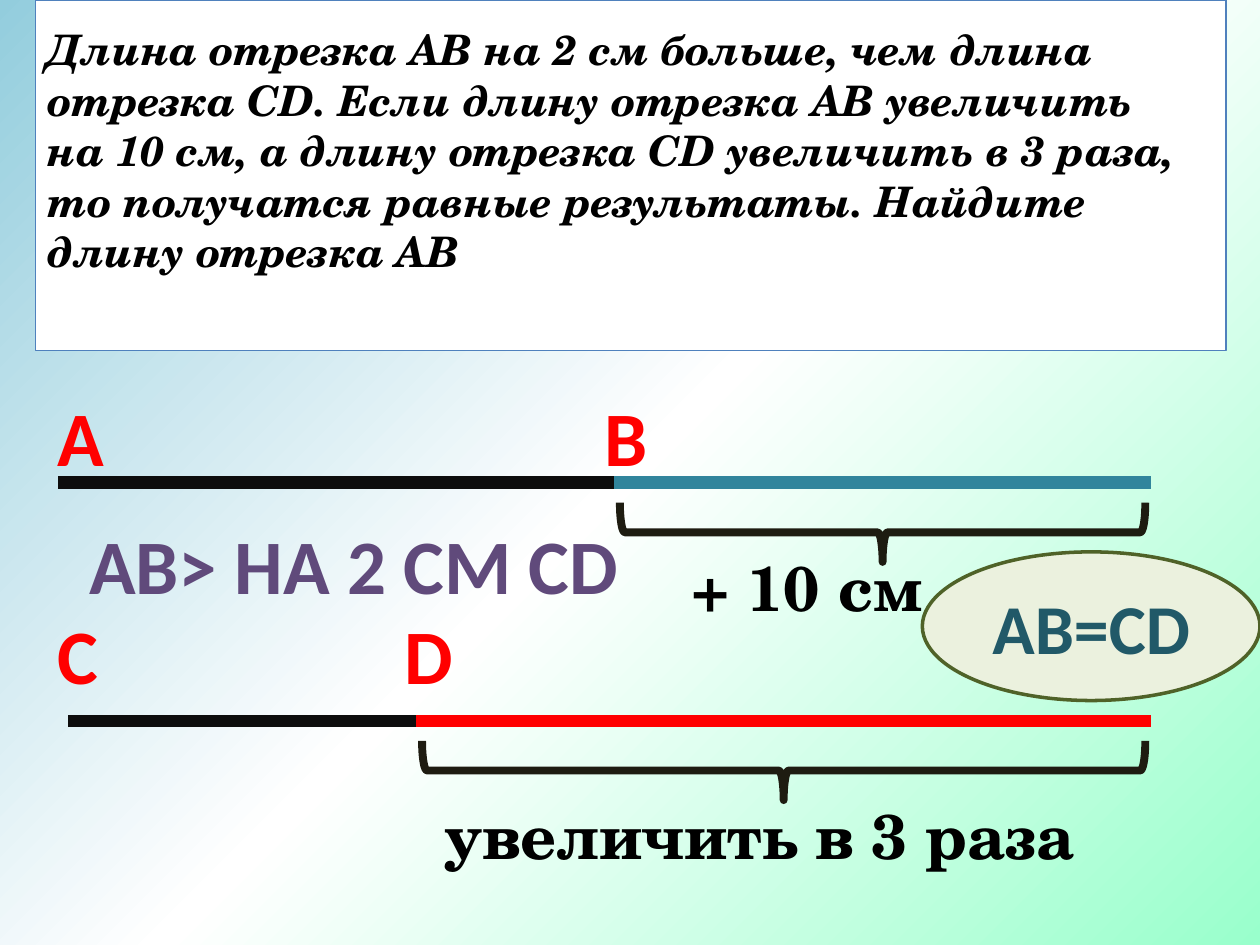
from copy import deepcopy

from pptx import Presentation
from pptx import util as u
from pptx.dml.color import RGBColor
from pptx.enum import shapes, text
from pptx.oxml import ns, xmlchemy

SKY = RGBColor(0x93, 0xCD, 0xDD)
WHITE = RGBColor(0xFF, 0xFF, 0xFF)
MINT = RGBColor(0x99, 0xFF, 0xCC)
BLUE = RGBColor(0x4F, 0x81, 0xBD)
BLACK = RGBColor(0x00, 0x00, 0x00)
INK = RGBColor(0x0D, 0x0D, 0x0D)
RED = RGBColor(0xFF, 0x00, 0x00)
TEAL = RGBColor(0x31, 0x85, 0x9C)
PURPLE = RGBColor(0x60, 0x4A, 0x7B)
BROWN = RGBColor(0x1E, 0x1C, 0x11)
PALE_GREEN = RGBColor(0xEB, 0xF1, 0xDE)
DARK_GREEN = RGBColor(0x4F, 0x62, 0x28)
DARK_TEAL = RGBColor(0x21, 0x59, 0x68)

SANS = "Calibri"
SERIF = "TeX Gyre Schola"
AB_Y = 3.83
CD_Y = 5.72

PROBLEM = [
    "Длина отрезка АВ на 2 см больше, чем длина",
    "отрезка CD. Если длину отрезка АВ увеличить",
    "на 10 см, а длину отрезка СD увеличить в 3 раза,",
    "то получатся равные результаты. Найдите",
    "длину отрезка АВ",
]


class Diagram:
    def __init__(self, slide):
        self.slide = slide

    def background(self, *colors):
        fill = self.slide.background.fill
        fill.gradient()
        fill.gradient_angle = 315
        stops = self.slide.element.find(".//" + ns.qn("a:gsLst"))
        stops.append(deepcopy(stops[-1]))
        for index, (stop, color) in enumerate(zip(fill.gradient_stops, colors)):
            stop.position = index / (len(colors) - 1)
            stop.color.rgb = color

    def set_text(self, frame, lines, size, font, color, align, italic=False):
        frame.text = "\n".join(lines)
        for paragraph in frame.paragraphs:
            paragraph.alignment = align
            paragraph.font.size = u.Pt(size)
            paragraph.font.name = font
            paragraph.font.bold = True
            paragraph.font.italic = italic
            paragraph.font.color.rgb = color

    def shape(self, kind, box, line, width, fill=None):
        shape = self.slide.shapes.add_shape(kind, *map(u.Inches, box))
        shape.shadow.inherit = False
        shape.line.color.rgb = line
        shape.line.width = u.Pt(width)
        if fill is None:
            shape.fill.background()
        else:
            shape.fill.solid()
            shape.fill.fore_color.rgb = fill
        shape.text_frame.vertical_anchor = text.MSO_ANCHOR.MIDDLE
        return shape

    def segment(self, start, end, y, color):
        line = self.slide.shapes.add_connector(
            shapes.MSO_CONNECTOR.STRAIGHT, *map(u.Inches, (start, y, end, y)))
        line.line.color.rgb = color
        line.line.width = u.Pt(7)
        properties = line.element.spPr
        properties.find(ns.qn("a:ln")).set("cap", "sq")
        properties.append(xmlchemy.OxmlElement("a:effectLst"))

    def brace(self, left, right, top, depth=0.47):
        span = right - left
        box = ((left + right - depth) / 2, top + (depth - span) / 2, depth, span)
        brace = self.shape(shapes.MSO_SHAPE.LEFT_BRACE, box, BROWN, 4.5)
        brace.rotation = 270

    def text_box(self, box, wrap, words, size, font, color, align):
        frame = self.slide.shapes.add_textbox(*map(u.Inches, box)).text_frame
        frame.word_wrap = wrap
        frame.auto_size = text.MSO_AUTO_SIZE.SHAPE_TO_FIT_TEXT
        self.set_text(frame, [words], size, font, color, align)

    def label(self, words, left, top, width, color=RED):
        self.text_box((left, top, width, 0.84), False, words, 44, SANS, color,
                      text.PP_ALIGN.CENTER)

    def note(self, words, left, top, width):
        self.text_box((left, top, width, 0.71), True, words, 36, SERIF, BLACK,
                      text.PP_ALIGN.LEFT)


def main():
    deck = Presentation()
    deck.slide_width, deck.slide_height = u.Inches(10), u.Inches(7.5)
    diagram = Diagram(deck.slides.add_slide(deck.slide_layouts[6]))
    diagram.background(SKY, WHITE, MINT)

    problem = diagram.shape(shapes.MSO_SHAPE.RECTANGLE, (0.28, 0, 9.45, 2.78),
                            BLUE, 0.75, WHITE).text_frame
    problem.word_wrap = True
    problem.margin_bottom = u.Inches(0.45)
    diagram.set_text(problem, PROBLEM, 24, SERIF, BLACK, text.PP_ALIGN.LEFT, italic=True)

    for start, end, y, color in [
        (0.51, 4.84, AB_Y, INK),
        (4.92, 9.09, AB_Y, TEAL),
        (0.59, 3.27, CD_Y, INK),
        (3.35, 9.09, CD_Y, RED),
    ]:
        diagram.segment(start, end, y, color)

    for point, left, top, width in [
        ("А", 0.35, 3.04, 0.58),
        ("В", 4.69, 3.04, 0.55),
        ("С", 0.35, 4.77, 0.53),
        ("D", 3.11, 4.77, 0.59),
    ]:
        diagram.label(point, left, top, width)
    diagram.label("АВ> НА 2 СМ СD", 0.59, 4.06, 4.44, PURPLE)

    diagram.brace(4.92, 9.09, AB_Y + 0.16)
    diagram.brace(3.35, 9.09, CD_Y + 0.16)
    diagram.note("+ 10 cм", 5.39, 4.3, 2.44)
    diagram.note("увеличить в 3 раза", 3.43, 6.27, 6.06)

    equality = diagram.shape(shapes.MSO_SHAPE.OVAL, (7.32, 4.38, 2.68, 1.18),
                             DARK_GREEN, 2, PALE_GREEN)
    diagram.set_text(equality.text_frame, ["АВ=CD"], 40, SANS, DARK_TEAL,
                     text.PP_ALIGN.CENTER)

    deck.save("out.pptx")


if __name__ == "__main__":
    main()
